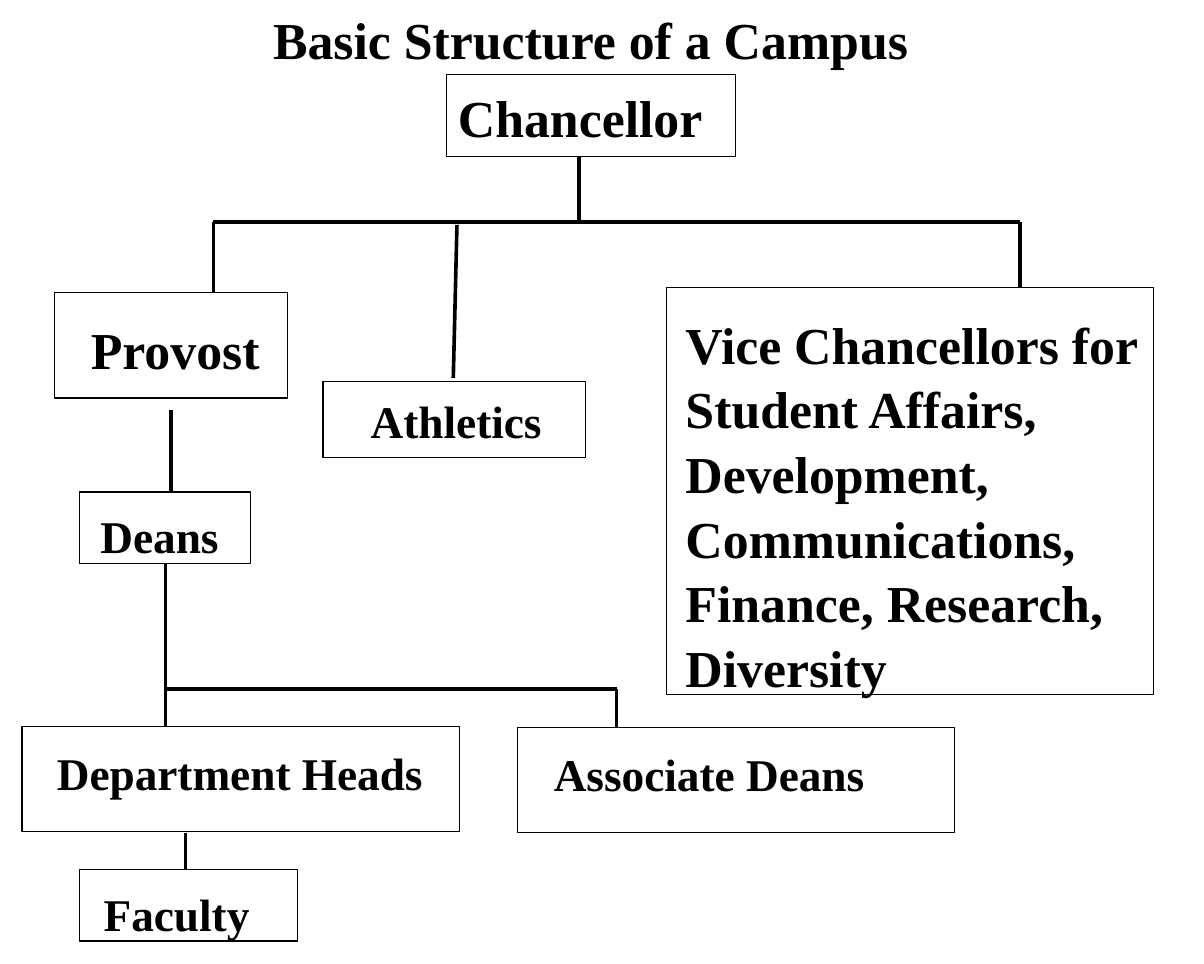
from dataclasses import dataclass

from lxml import etree
from pptx import Presentation
from pptx.dml.color import RGBColor
from pptx.enum.shapes import MSO_CONNECTOR, MSO_SHAPE
from pptx.enum.text import MSO_ANCHOR, PP_ALIGN
from pptx.oxml.ns import qn
from pptx.util import Cm, Pt

STRAIGHT = MSO_CONNECTOR.STRAIGHT
RECTANGLE = MSO_SHAPE.RECTANGLE
TOP, MIDDLE = MSO_ANCHOR.TOP, MSO_ANCHOR.MIDDLE
LEFT, CENTER = PP_ALIGN.LEFT, PP_ALIGN.CENTER


@dataclass(frozen=True)
class Theme:
    ink: RGBColor = RGBColor(0, 0, 0)
    paper: RGBColor = RGBColor(255, 255, 255)
    font: str = "Times New Roman"
    large: float = 32
    medium: float = 28
    outline: float = 0.75
    link: float = 2.25
    line_spacing: float = 1.04


@dataclass(frozen=True)
class Box:
    """A rectangle in centimetres."""
    left: float
    top: float
    width: float
    height: float

    def inner(self, dx, dy, width, height):
        return Box(self.left + dx, self.top + dy, width, height)

    def lengths(self):
        return [Cm(v) for v in (self.left, self.top, self.width, self.height)]


THEME = Theme()


def write(frame, words, size, align, anchor, inset=(0, 0)):
    frame.word_wrap = True
    frame.vertical_anchor = anchor
    frame.margin_left, frame.margin_top = Cm(inset[0]), Cm(inset[1])
    frame.margin_right = frame.margin_bottom = Cm(0)
    frame.text = words
    paragraph = frame.paragraphs[0]
    paragraph.alignment = align
    paragraph.line_spacing = THEME.line_spacing
    font = paragraph.runs[0].font
    font.name, font.size, font.bold = THEME.font, Pt(size), True
    font.color.rgb = THEME.ink


def add_post(slide, box, words, size, inset):
    """One outlined position on the chart; inset is the text's left and top gap."""
    post = slide.shapes.add_shape(RECTANGLE, *box.lengths())
    post.shadow.inherit = False
    post.fill.background()
    post.line.color.rgb = THEME.ink
    post.line.width = Pt(THEME.outline)
    write(post.text_frame, words, size, LEFT, TOP, inset)


def add_links(slide, box, links):
    """Straight lines given as x1, y1, x2, y2 from the corner of the box."""
    for x1, y1, x2, y2 in links:
        link = slide.shapes.add_connector(
            STRAIGHT, Cm(box.left + x1), Cm(box.top + y1),
            Cm(box.left + x2), Cm(box.top + y2))
        link.line.color.rgb = THEME.ink
        link.line.width = Pt(THEME.link)
        etree.SubElement(link._element.spPr, qn("a:effectLst"))


def draw_title(slide, box):
    title = slide.shapes.add_textbox(*box.lengths())
    write(title.text_frame, "Basic Structure of a Campus", THEME.large, CENTER, MIDDLE)


def draw_executive(slide, box):
    # Chancellor and direct reports
    add_post(slide, box.inner(8.54, 0, 6.3, 1.78), "Chancellor", THEME.large, (0.25, 0.18))
    add_post(slide, box.inner(0, 4.75, 5.08, 2.29), "Provost", THEME.large, (0.79, 0.48))
    add_post(slide, box.inner(5.85, 6.68, 5.72, 1.65), "Athletics", THEME.medium, (1.04, 0.2))
    add_post(slide, box.inner(13.34, 4.64, 10.62, 8.86),
             "Vice Chancellors for Student Affairs, Development, "
             "Communications, Finance, Research, Diversity",
             THEME.large, (0.41, 0.48))

    # Stem, rail and the three drops
    rail, provost_x, vice_x, stem_x = 3.2, 3.46, 21.04, 11.43
    add_links(slide, box, [
        (stem_x, 1.78, stem_x, rail),
        (provost_x, rail, vice_x, rail),
        (provost_x, rail, provost_x, 4.75),
        (8.77, 3.27, 8.69, 6.6),
        (vice_x, rail, vice_x, 4.62),
    ])


def draw_academic(slide, box):
    # Deans and those below them
    posts = [
        ("Deans", (1.25, 1.78, 3.73, 1.55), (0.46, 0.3)),
        ("Department Heads", (0, 6.88, 9.53, 2.29), (0.76, 0.36)),
        ("Associate Deans", (10.8, 6.91, 9.53, 2.29), (0.79, 0.36)),
        ("Faculty", (1.25, 10.01, 4.75, 1.55), (0.53, 0.3)),
    ]
    for words, place, inset in posts:
        add_post(slide, box.inner(*place), words, THEME.medium, inset)

    # Chain of reporting, with a branch to the associate deans
    trunk_x, branch_y, associate_x = 3.13, 6.07, 12.96
    add_links(slide, box, [
        (3.25, 0, 3.25, 1.75),
        (trunk_x, 3.33, trunk_x, 6.88),
        (trunk_x, branch_y, associate_x, branch_y),
        (associate_x, branch_y, associate_x, 6.91),
        (3.56, 9.2, 3.56, 9.98),
    ])


def main():
    deck = Presentation()
    deck.slide_width, deck.slide_height = Cm(26.24), Cm(21)
    slide = deck.slides.add_slide(deck.slide_layouts[6])
    slide.background.fill.solid()
    slide.background.fill.fore_color.rgb = THEME.paper

    draw_title(slide, Box(1.73, 0, 22.3, 1.63))
    draw_executive(slide, Box(1.19, 1.63, 23.96, 13.5))
    draw_academic(slide, Box(0.48, 8.94, 20.33, 11.56))
    deck.save("out.pptx")


if __name__ == "__main__":
    main()
